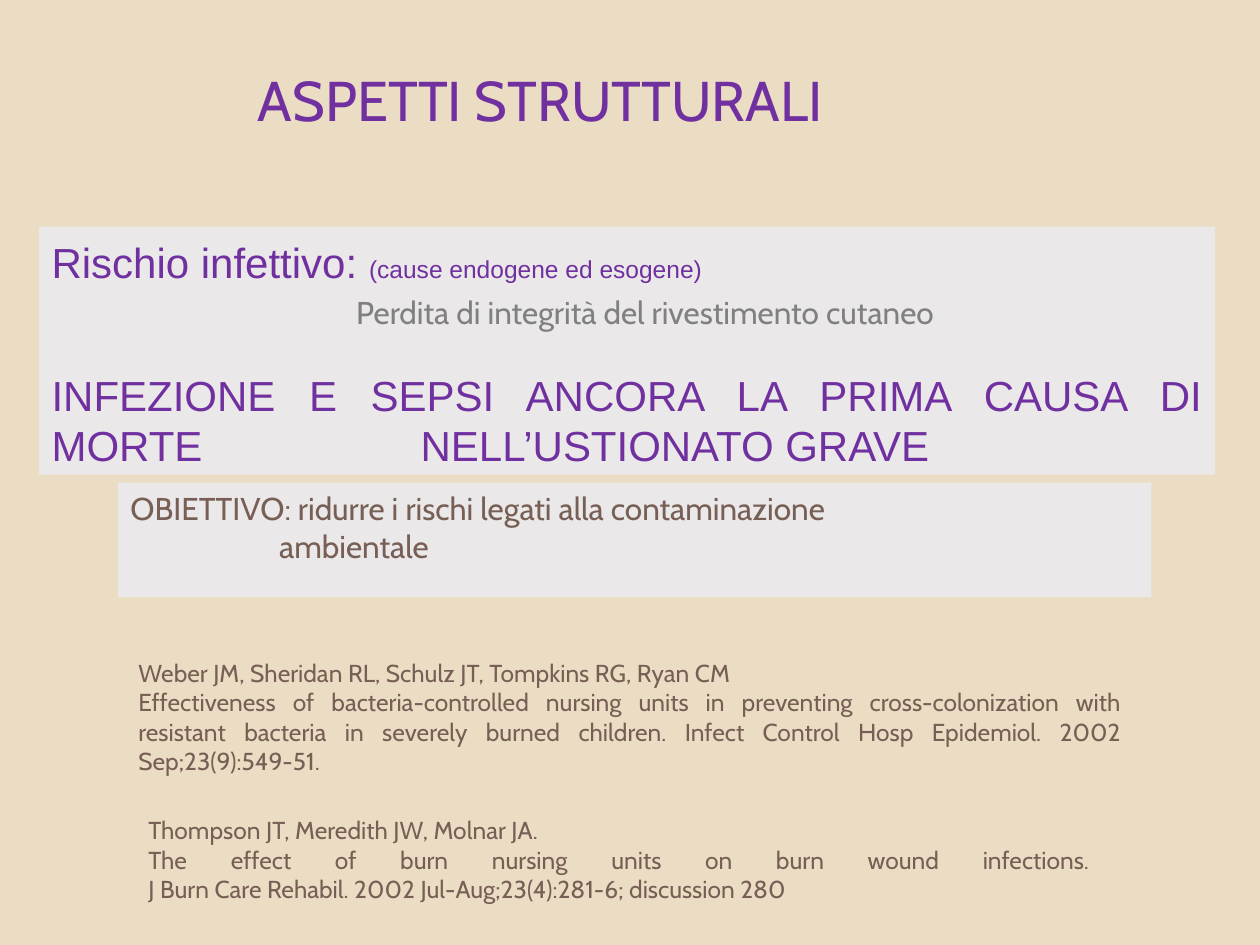
from pptx import Presentation
from pptx.dml.color import RGBColor
from pptx.enum.shapes import MSO_SHAPE
from pptx.enum.text import MSO_ANCHOR, PP_ALIGN
from pptx.util import Cm, Pt
from lxml import etree

RECT = MSO_SHAPE.RECTANGLE
TOP = MSO_ANCHOR.TOP
LEFT = PP_ALIGN.LEFT
FULL = PP_ALIGN.JUSTIFY

SAND = RGBColor(0xEB, 0xDD, 0xC3)
PALE = RGBColor(0xEA, 0xE8, 0xE8)
PLUM = RGBColor(0x70, 0x30, 0xA0)
BROWN = RGBColor(0x77, 0x5F, 0x55)
GREY = RGBColor(0x80, 0x80, 0x80)

RISK = dict(font="Arial", size=24, color=PLUM, align=FULL, line=28.5)
GOAL = dict(size=18, color=BROWN)
CITE = dict(size=14, color=BROWN, align=FULL)

BOXES = [
    dict(at=(4.95, 1.19, 15.44, 1.63), paras=[
        ("ASPETTI STRUTTURALI", dict(size=32, color=PLUM, align=FULL)),
    ]),
    dict(at=(0.79, 4.57, 23.7, 5), fill=PALE, inset=0.2, paras=[
        ([("Rischio infettivo: ", 24), ("(cause endogene ed esogene)", 14)], RISK),
        ("INFEZIONE E SEPSI ANCORA LA PRIMA CAUSA DI MORTE \tNELL’USTIONATO GRAVE",
         dict(RISK, before=48, tab=7.44)),
    ]),
    dict(at=(2.38, 9.73, 20.83, 2.31), fill=PALE, paras=[
        ("OBIETTIVO: ridurre i rischi legati alla contaminazione", GOAL),
        ("ambientale", dict(GOAL, indent=3)),
    ]),
    dict(at=(6.93, 5.77, 16.92, 1.3), paras=[
        ("Perdita di integrità del rivestimento cutaneo", dict(size=18, color=GREY)),
    ]),
    dict(at=(2.54, 13.13, 20.32, 2.69), paras=[
        ("Weber JM, Sheridan RL, Schulz JT, Tompkins RG, Ryan CM", CITE),
        ("Effectiveness of bacteria-controlled nursing units in preventing "
         "cross-colonization with resistant bacteria in severely burned children. "
         "Infect Control Hosp Epidemiol. 2002 Sep;23(9):549-51.", CITE),
    ]),
    dict(at=(2.74, 16.31, 19.48, 2.06), paras=[
        ("Thompson JT, Meredith JW, Molnar JA.", CITE),
        ("The effect of burn nursing units on burn wound infections.\n"
         "J Burn Care Rehabil. 2002 Jul-Aug;23(4):281-6; discussion 280", CITE),
    ]),
]


def write(para, text, font="Cabin", size=18, color=BROWN, align=LEFT,
          line=None, before=0, tab=None, indent=0):
    props = para._p.get_or_add_pPr()
    props.set("marL", str(Cm(indent)))
    if tab:
        space = props.nsmap["a"]
        tabs = etree.SubElement(props, f"{{{space}}}tabLst")
        etree.SubElement(tabs, f"{{{space}}}tab", pos=str(Cm(tab)), algn="l")
    para.alignment = align
    para.space_before = Pt(before)
    if line:
        para.line_spacing = Pt(line)
    parts = [(text, size)] if isinstance(text, str) else text
    for words, pts in parts:
        for num, row in enumerate(words.split("\n")):
            if num:
                para.add_line_break()
            run = para.add_run()
            run.text = row
            run.font.name = font
            run.font.size = Pt(pts)
            run.font.color.rgb = color


def place(slide, at, paras, fill=None, inset=0.13):
    area = [Cm(side) for side in at]
    if fill is None:
        box = slide.shapes.add_textbox(*area)
    else:
        box = slide.shapes.add_shape(RECT, *area)
        box.shadow.inherit = False
        box.fill.solid()
        box.fill.fore_color.rgb = fill
        box.line.fill.background()
    frame = box.text_frame
    frame.word_wrap = True
    frame.vertical_anchor = TOP
    frame.margin_top = Cm(inset)
    for num, (text, style) in enumerate(paras):
        para = frame.add_paragraph() if num else frame.paragraphs[0]
        write(para, text, **style)


def main():
    deck = Presentation()
    deck.slide_width, deck.slide_height = Cm(25.4), Cm(19.05)
    slide = deck.slides.add_slide(deck.slide_layouts[6])
    slide.background.fill.solid()
    slide.background.fill.fore_color.rgb = SAND
    for box in BOXES:
        place(slide, **box)
    deck.save("out.pptx")


if __name__ == "__main__":
    main()
